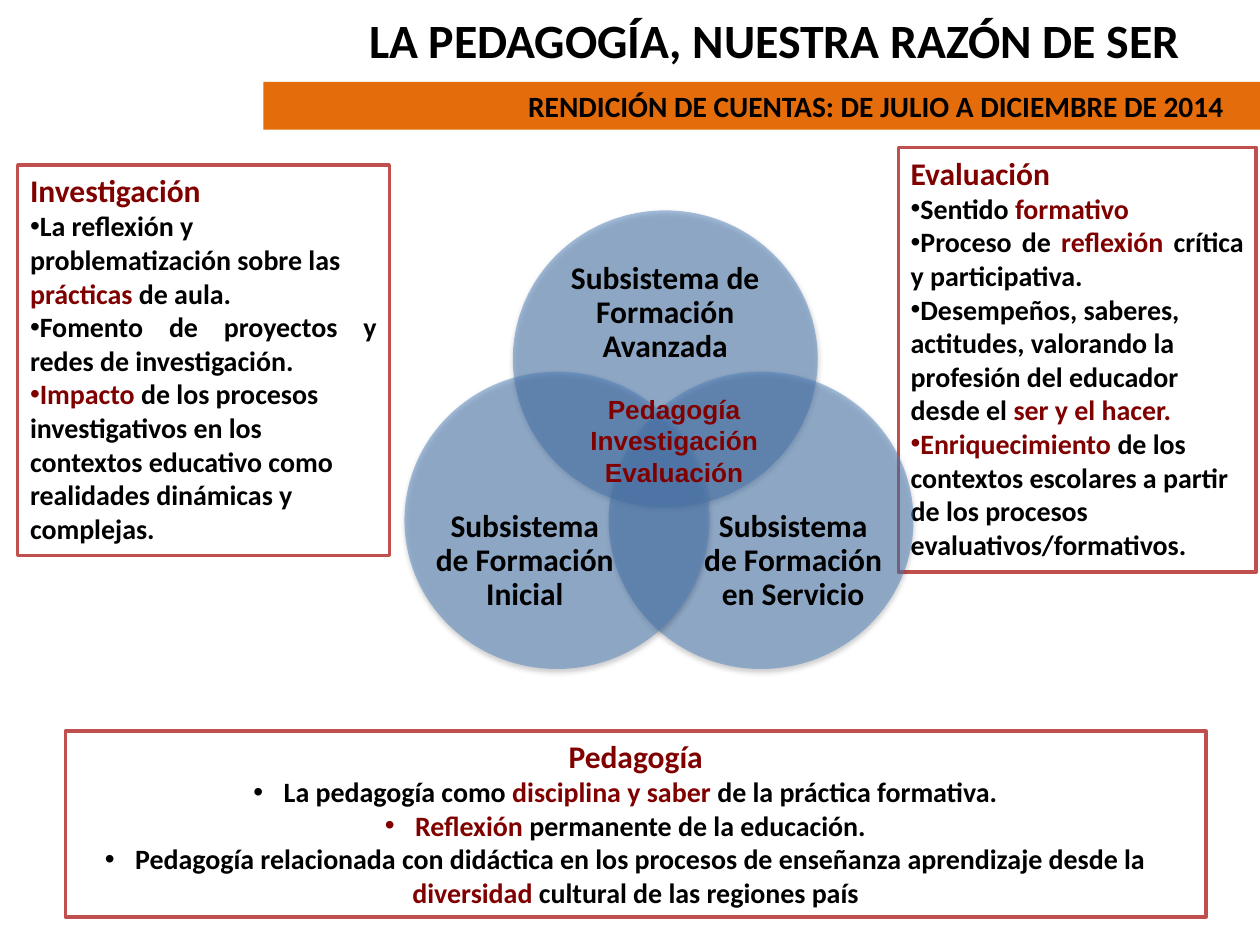
from lxml import etree
from pptx import Presentation
from pptx.dml.color import RGBColor
from pptx.enum.shapes import MSO_SHAPE
from pptx.enum.text import MSO_ANCHOR, PP_ALIGN
from pptx.oxml.ns import qn
from pptx.util import Inches, Pt

RECT, OVAL = MSO_SHAPE.RECTANGLE, MSO_SHAPE.OVAL
LEFT, CENTER, RIGHT, JUSTIFY = (PP_ALIGN.LEFT, PP_ALIGN.CENTER,
                                PP_ALIGN.RIGHT, PP_ALIGN.JUSTIFY)
TOP, MIDDLE, BOTTOM = MSO_ANCHOR.TOP, MSO_ANCHOR.MIDDLE, MSO_ANCHOR.BOTTOM
BLACK = RGBColor(0, 0, 0)
WHITE = RGBColor(0xFF, 0xFF, 0xFF)
MAROON = RGBColor(0x80, 0, 0)
RED = RGBColor(0xC0, 0x50, 0x4D)
ORANGE = RGBColor(0xE4, 0x6C, 0x0A)
BLUE = RGBColor(0x4F, 0x81, 0xBD)
COLS, ROWS = 100, 75


class Deck:
    """Style and current slide; lengths are columns and rows of the grid."""

    def __init__(self):
        self.prs = Presentation()
        self.prs.slide_width, self.prs.slide_height = Inches(10), Inches(7.5)
        self.s = self.prs.slides.add_slide(self.prs.slide_layouts[6])

    def place(self, x, y, w, h):
        col, row = self.prs.slide_width / COLS, self.prs.slide_height / ROWS
        return [round(v) for v in (x * col, y * row, w * col, h * row)]

    def shape(self, kind, box, fill, line=None):
        sp = self.s.shapes.add_shape(kind, *self.place(*box))
        sp.shadow.inherit = False
        sp.fill.solid()
        sp.fill.fore_color.rgb = fill
        if line is None:
            sp.line.fill.background()
        else:
            sp.line.color.rgb, sp.line.width = line, Pt(2)
        return sp

    def frame(self, sp, anchor=TOP, **margins):
        tf = sp.text_frame
        tf.word_wrap, tf.vertical_anchor = True, anchor
        for side, inches in margins.items():
            setattr(tf, f"margin_{side}", Inches(inches))
        return tf

    def para(self, tf, text, size, align=CENTER, color=BLACK, name="Calibri",
             spacing=None, hang=None):
        """Add a paragraph; *starred* words are maroon, hang gives a bullet."""
        first = len(tf.paragraphs) == 1 and not tf.paragraphs[0].runs
        p = tf.paragraphs[0] if first else tf.add_paragraph()
        p.alignment = align
        if spacing:
            p.line_spacing = spacing
        if hang is not None:
            pPr = p._p.get_or_add_pPr()
            pPr.set("marL", "0")
            pPr.set("indent", str(-Inches(hang)))
            etree.SubElement(pPr, qn("a:buFont")).set("typeface", "Arial")
            etree.SubElement(pPr, qn("a:buChar")).set("char", "•")
        for i, part in enumerate(text.split("*")):
            if part:
                r = p.add_run()
                r.text = part
                style = {"name": name, "size": Pt(size), "bold": True}
                for key, value in style.items():
                    setattr(r.font, key, value)
                r.font.color.rgb = MAROON if i % 2 else color

    def label(self, box, lines, size, anchor=TOP, margins=None, **fmt):
        sp = self.s.shapes.add_textbox(*self.place(*box))
        tf = self.frame(sp, anchor, **(margins or {}))
        for line in lines:
            self.para(tf, line, size, **fmt)

    def banner(self, box, text):
        tf = self.frame(self.shape(RECT, box, ORANGE), MIDDLE, right=0.3)
        self.para(tf, text, 16.8, RIGHT)

    def panel(self, box, title, items, title_align=LEFT, hang=0):
        tf = self.frame(self.shape(RECT, box, WHITE, RED))
        self.para(tf, title, 18, title_align, MAROON)
        for align, text in items:
            self.para(tf, text, 16, align, hang=hang)

    def circle(self, x, y):
        sp = self.shape(OVAL, (x, y, 24.2, 23.6), BLUE)
        color = sp._element.spPr.find(qn("a:solidFill"))[0]
        etree.SubElement(color, qn("a:alpha")).set("val", "50000")
        effects = sp._element.spPr.find(qn("a:effectLst"))
        shadow = etree.SubElement(effects, qn("a:outerShdw"), blurRad=str(Pt(3.1)),
                                  dist=str(Pt(1.6)), dir="5400000", rotWithShape="0")
        black = etree.SubElement(shadow, qn("a:srgbClr"), val="000000")
        etree.SubElement(black, qn("a:alpha")).set("val", "38000")


def main():
    d = Deck()

    # Heading
    d.label((27.2, 0.2, 68.5, 5.8), ["LA PEDAGOGÍA, NUESTRA RAZÓN DE SER"], 27.3, MIDDLE)
    d.banner((20.9, 6.5, 79.2, 3.8), "RENDICIÓN DE CUENTAS: DE JULIO A DICIEMBRE DE 2014")

    # Side panels
    d.panel((1.4, 13.1, 29.5, 31), "Investigación", [
        (LEFT, "La reflexión y problematización sobre las *prácticas* de aula."),
        (JUSTIFY, "Fomento de proyectos y redes de investigación."),
        (LEFT, "*Impacto* de los procesos investigativos en los contextos "
               "educativo como realidades dinámicas y complejas."),
    ])
    d.panel((71.3, 11.7, 28.4, 33.7), "Evaluación", [
        (JUSTIFY, "Sentido *formativo*"),
        (JUSTIFY, "Proceso de *reflexión* crítica y participativa."),
        (LEFT, "Desempeños, saberes, actitudes, valorando la profesión del "
               "educador desde el *ser y el hacer.*"),
        (LEFT, "*Enriquecimiento* de los contextos escolares a partir de los "
               "procesos evaluativos/formativos."),
    ])

    # Venn diagram: circle corner, label box, anchor, text
    flat = dict.fromkeys(("left", "top", "right", "bottom"), 0)
    for corner, box, anchor, name in [
        ((40.7, 16.7), (44, 20.8, 17.6, 10.6), TOP, "Avanzada"),
        ((48.3, 29.5), (55.7, 35.6, 14.5, 13), BOTTOM, "en Servicio"),
        ((32.1, 29.5), (34.4, 35.6, 14.5, 13), BOTTOM, "Inicial"),
    ]:
        d.circle(*corner)
        d.label(box, [f"Subsistema de Formación {name}"], 18, anchor, flat, spacing=0.9)
    d.label((42.4, 30.7, 22.2, 7.9), ["Pedagogía", "Investigación", "Evaluación"],
            15, color=MAROON, name="Arial")

    # Bottom panel
    d.panel((5.2, 58, 90.5, 14.8), "Pedagogía", [
        (CENTER, "La pedagogía como *disciplina y saber* de la práctica formativa."),
        (CENTER, "*Reflexión* permanente de la educación."),
        (CENTER, "Pedagogía relacionada con didáctica en los procesos de enseñanza "
                 "aprendizaje desde la *diversidad* cultural de las regiones país"),
    ], CENTER, hang=0.24)

    d.prs.save("out.pptx")


if __name__ == "__main__":
    main()
